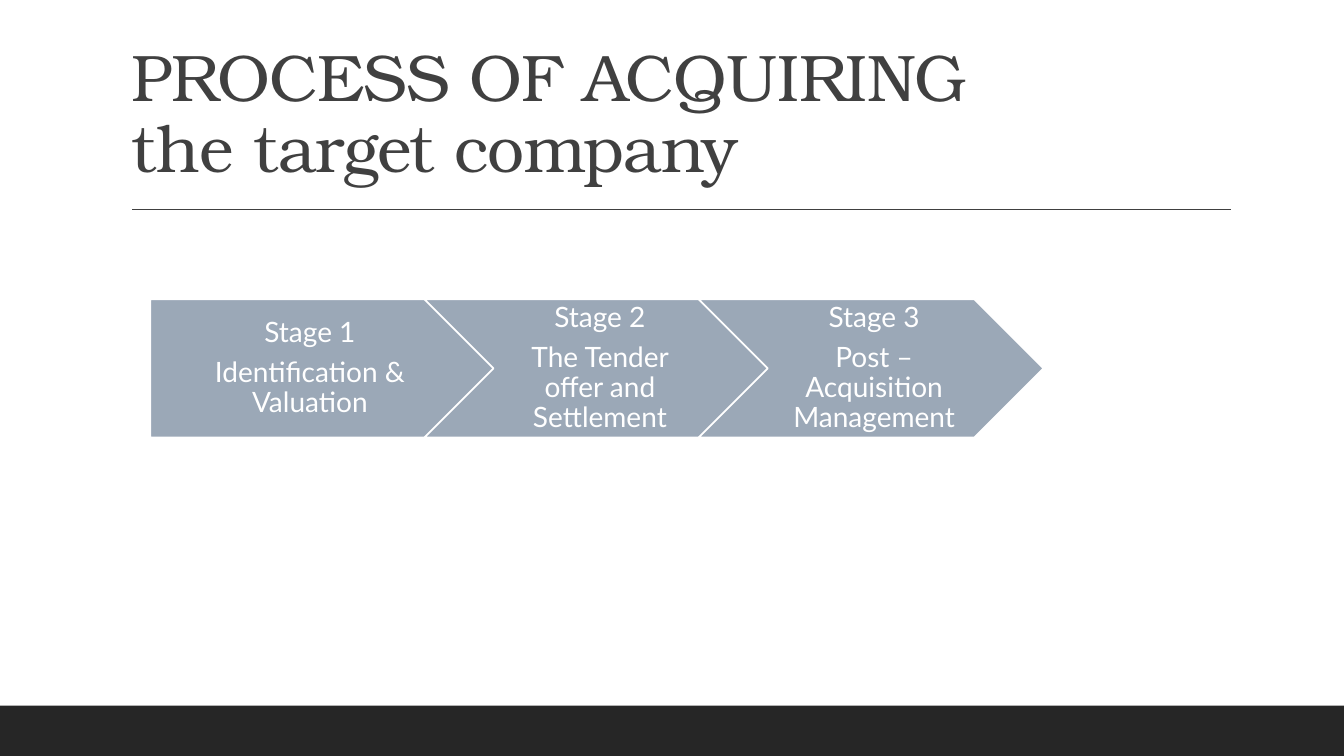
from pptx import Presentation
from pptx import util as u
from pptx.dml import color
from pptx.enum import shapes, text
from pptx.oxml import ns
from lxml import etree


def rgb(code):
    return color.RGBColor.from_string(code)


def apply(item, values):
    for name, value in values.items():
        setattr(item, name, value)


class Deck:
    dark, bar, steel, white = "404040", "262626", "9BA8B7", "FFFFFF"
    head = {"name": "TeX Gyre Bonum", "size": u.Pt(47)}
    body = {"name": "Lato", "size": u.Pt(20)}

    def __init__(self):
        self.file = Presentation()
        apply(self.file, {"slide_width": u.Inches(13.33),
                          "slide_height": u.Inches(7.5)})
        self.slide = self.file.slides.add_slide(self.file.slide_layouts[5])

    def label(self, frame, lines, font, tint, para, box):
        apply(frame, {"word_wrap": True, "auto_size": text.MSO_AUTO_SIZE.NONE, **box})
        frame.text = "\n".join(lines)
        for part in frame.paragraphs:
            apply(part, {"line_spacing": 0.9, **para})
            for run in part.runs:
                apply(run.font, font)
                run.font.color.rgb = rgb(tint)

    def title(self, words, *area):
        shape = self.slide.shapes.title
        apply(shape, dict(zip(("left", "top", "width", "height"), map(u.Inches, area))))
        self.label(shape.text_frame, [words], self.head, self.dark,
                   {"alignment": text.PP_ALIGN.LEFT},
                   {"vertical_anchor": text.MSO_ANCHOR.BOTTOM})
        for run in shape.text_frame.paragraphs[0].runs:
            run.font._element.set("spc", "-50")

    def shape(self, kind, fill, *area):
        shape = self.slide.shapes.add_shape(kind, *map(u.Inches, area))
        shape.shadow.inherit = False
        shape.fill.solid()
        shape.fill.fore_color.rgb = rgb(fill)
        shape.line.fill.background()
        return shape

    def rule(self, left, right, top):
        line = self.slide.shapes.add_connector(
            shapes.MSO_CONNECTOR.STRAIGHT, *map(u.Inches, (left, top, right, top)))
        line.line.color.rgb = rgb(self.dark)
        line.line.width = u.Pt(1)
        etree.SubElement(line._element.spPr, ns.qn("a:effectLst"))

    def stage(self, kind, lines, inset, *area):
        shape = self.shape(kind, self.steel, *area)
        shape.adjustments[0] = 0.5
        shape.line.color.rgb = rgb(self.white)
        shape.line.width = u.Pt(1.25)
        self.label(shape.text_frame, lines, self.body, self.white,
                   {"alignment": text.PP_ALIGN.CENTER, "space_after": u.Pt(7)},
                   {"vertical_anchor": text.MSO_ANCHOR.MIDDLE,
                    "margin_left": u.Inches(inset), "margin_right": u.Inches(0.03),
                    "margin_top": u.Inches(0.06), "margin_bottom": u.Inches(0.06)})


def main():
    deck = Deck()

    # Frame and title
    deck.shape(shapes.MSO_SHAPE.RECTANGLE, deck.bar, 0, 7, 13.33, 0.5)
    deck.rule(1.31, 12.21, 2.08)
    deck.title("PROCESS OF ACQUIRING\vthe target company", 1.2, 0.31, 11, 1.59)

    # Three linked stages
    stages = ["Identification & Valuation",
              "The Tender offer and Settlement",
              "Post –Acquisition Management"]
    for i, name in enumerate(stages):
        kind = shapes.MSO_SHAPE.CHEVRON if i else shapes.MSO_SHAPE.PENTAGON
        deck.stage(kind, [f"Stage {i + 1}", name], 0.09 if i else 0.12,
                   1.49 + 2.72 * i, 2.97, 3.42, 1.37)

    deck.file.save("out.pptx")


if __name__ == "__main__":
    main()
